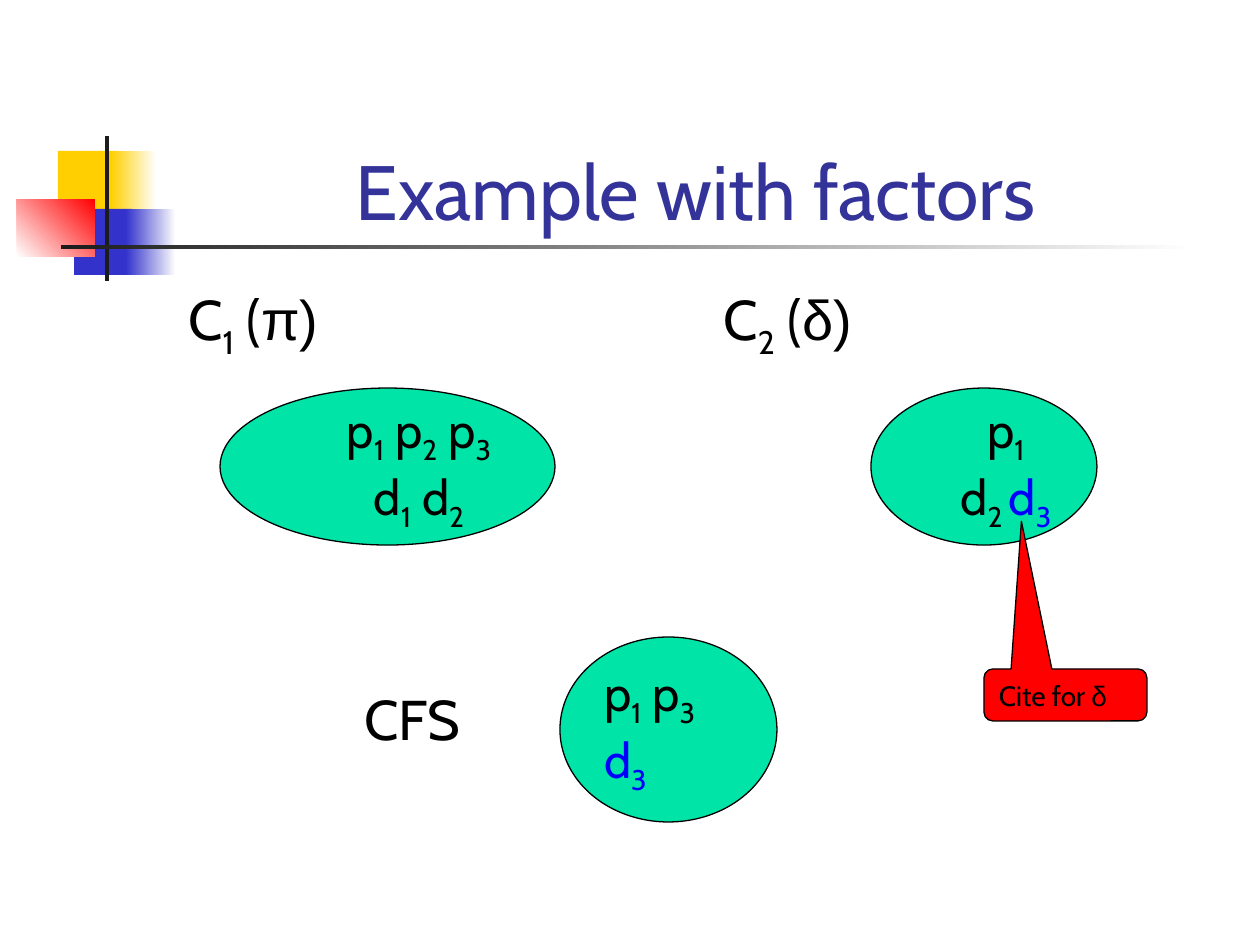
from lxml import etree
from pptx import Presentation
from pptx.dml.color import RGBColor
from pptx.enum import shapes, text
from pptx.oxml.ns import qn
from pptx.util import Inches, Pt

COLORS = {"yellow": "FFCF01", "blue": "3333CC", "red": "FF0000", "dark": "1C1C1C",
          "white": "FFFFFF", "title": "333399", "black": "000000",
          "green": "00E4A8", "new": "0000FF"}
RGB = {name: RGBColor.from_string(value) for name, value in COLORS.items()}
SHAPE = shapes.MSO_SHAPE


def px(*lengths):
    """Turn pixels (126 to the inch) into EMU."""
    return [Inches(length / 126) for length in lengths]


def write(paragraph, size, *parts):
    """Add (text, colour, font) parts; the character after "_" is a subscript."""
    for words, color, font in parts:
        first, *rest = words.split("_")
        pieces = [(first, False)]
        for piece in rest:
            pieces += [(piece[0], True), (piece[1:], False)]
        for piece, lowered in pieces:
            if not piece:
                continue
            run = paragraph.add_run()
            run.text = piece
            run.font.size, run.font.name = Pt(size), font
            run.font.color.rgb = RGB[color]
            if lowered:
                run.font._element.set("baseline", "-25000")


prs = Presentation()
prs.slide_width, prs.slide_height = px(1260, 945)
slide = prs.slides.add_slide(prs.slide_layouts[1])

# Corner ornament and rule: box, colours, gradient angle
ornament = [
    ((58, 151, 60, 66), ["yellow"], 0),
    ((111, 151, 45, 66), ["yellow", "white"], 0),
    ((74, 209, 58, 66), ["blue"], 0),
    ((126, 209, 50, 66), ["blue", "white"], 0),
    ((17, 199, 78, 58), ["white", "red"], 45),
    ((105, 136, 4, 145), ["dark"], 0),
    ((61, 245, 1134, 4), ["dark", "white"], 0),
]
for box, tints, angle in ornament:
    block = slide.shapes.add_shape(SHAPE.RECTANGLE, *px(*box))
    block.shadow.inherit = False
    block.line.fill.background()
    if len(tints) == 1:
        block.fill.solid()
        block.fill.fore_color.rgb = RGB[tints[0]]
    else:
        block.fill.gradient()
        block.fill.gradient_angle = angle
        for stop, tint in zip(block.fill.gradient_stops, tints):
            stop.color.rgb = RGB[tint]

# Title
title = slide.shapes.title
title.left, title.top, title.width, title.height = px(159, 84, 1074, 158)
title.text_frame.vertical_anchor = text.MSO_ANCHOR.BOTTOM
title.text_frame.auto_size = text.MSO_AUTO_SIZE.NONE
heading = title.text_frame.paragraphs[0]
heading.alignment = text.PP_ALIGN.CENTER
write(heading, 44, ("Example with factors", "title", "Cabin"))

# Labels of the first set and, below it, the result
labels = slide.placeholders[1]
labels.left, labels.top, labels.width, labels.height = px(163, 278, 1071, 567)
labels.text_frame.auto_size = text.MSO_AUTO_SIZE.NONE
labels.text_frame.margin_left = px(25)[0]
first_set = labels.text_frame.paragraphs[0]
result = labels.text_frame.add_paragraph()
for line, indent, before in [(first_set, 0, 0), (result, 176, 185)]:
    line.space_before = Pt(before)
    props = line._p.get_or_add_pPr()
    props.set("marL", str(px(indent)[0]))
    props.set("indent", "0")
    etree.SubElement(props, qn("a:buNone"))
write(first_set, 32, ("C_1 (", "black", "Cabin"), ("π)", "black", "Arial"))
write(result, 32, ("CFS", "black", "Cabin"))

# Label of the second set, level with the first
second_set = slide.shapes.add_textbox(*px(711, 278, 300, 80))
second_set.text_frame.word_wrap = True
write(second_set.text_frame.paragraphs[0], 32,
      ("C_2 (", "black", "Cabin"), ("δ)", "black", "Arial"))

# Factor ellipses and the callout: kind, box, fill, size, indent, lines
new_factor = ("d_3", "new", "Cabin")
figures = [
    (SHAPE.OVAL, (560, 637, 217, 185), "green", 28, 0,
     [[("p_1 p_3", "black", "Cabin")], [new_factor]]),
    (SHAPE.OVAL, (871, 388, 226, 157), "green", 28, 44,
     [[("p_1", "black", "Cabin")], [("d_2_ ", "black", "Cabin"), new_factor]]),
    (SHAPE.OVAL, (220, 388, 335, 157), "green", 28, 63,
     [[("p_1 p_2 p_3", "black", "Cabin")], [("d_1 d_2", "black", "Cabin")]]),
    (SHAPE.ROUNDED_RECTANGULAR_CALLOUT, (984, 669, 163, 52), "red", 16, 0,
     [[("Cite for ", "black", "Cabin"), ("δ", "black", "Arial")]]),
]
for kind, box, fill, size, indent, lines in figures:
    figure = slide.shapes.add_shape(kind, *px(*box))
    figure.shadow.inherit = False
    figure.fill.solid()
    figure.fill.fore_color.rgb = RGB[fill]
    figure.line.color.rgb = RGB["black"]
    figure.line.width = Pt(0.75)
    if kind == SHAPE.ROUNDED_RECTANGULAR_CALLOUT:
        for i, value in enumerate([-0.27, -3.34, 0.17]):
            figure.adjustments[i] = value
    frame = figure.text_frame
    frame.vertical_anchor = text.MSO_ANCHOR.MIDDLE
    frame.word_wrap = indent == 0
    for i, parts in enumerate(lines):
        factors = frame.add_paragraph() if i else frame.paragraphs[0]
        factors.alignment = text.PP_ALIGN.CENTER if indent else text.PP_ALIGN.LEFT
        factors._p.get_or_add_pPr().set("marL", str(px(indent)[0]))
        write(factors, size, *parts)

prs.save("out.pptx")
